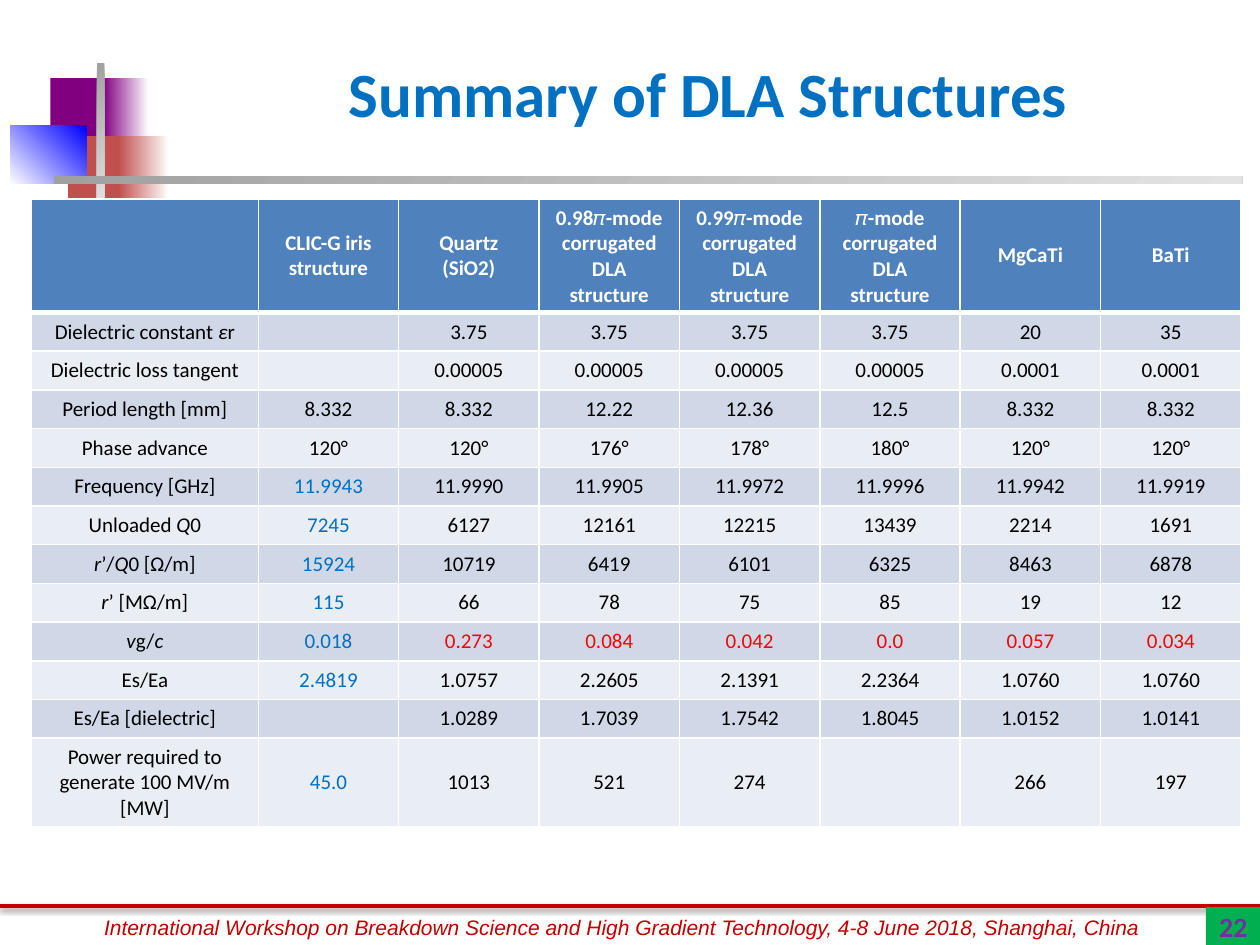
from lxml import etree
from pptx import Presentation
from pptx.dml.color import RGBColor
from pptx.enum.shapes import MSO_CONNECTOR, MSO_SHAPE
from pptx.enum.text import MSO_ANCHOR, PP_ALIGN
from pptx.oxml import parse_xml
from pptx.oxml.ns import nsdecls, qn
from pptx.util import Inches, Pt

CENTER, RIGHT = PP_ALIGN.CENTER, PP_ALIGN.RIGHT
MIDDLE, RECT = MSO_ANCHOR.MIDDLE, MSO_SHAPE.RECTANGLE
WHITE = RGBColor(0xFF, 0xFF, 0xFF)
BLACK = RGBColor(0x00, 0x00, 0x00)
PURPLE = RGBColor(0x80, 0x00, 0x80)
BRICK = RGBColor(0xC0, 0x50, 0x4D)
PURE_BLUE = RGBColor(0x00, 0x00, 0xFF)
DARK_GREY = RGBColor(0xA0, 0xA0, 0xA0)
LIGHT_GREY = RGBColor(0xE3, 0xE3, 0xE3)
CRIMSON = RGBColor(0xC0, 0x00, 0x00)
BLUE = RGBColor(0x00, 0x70, 0xC0)
RED = RGBColor(0xFF, 0x00, 0x00)
GREEN = RGBColor(0x00, 0xB0, 0x50)
VIOLET = RGBColor(0x70, 0x30, 0xA0)
HEADER = RGBColor(0x4F, 0x81, 0xBD)
BANDS = (RGBColor(0xE9, 0xED, 0xF4), RGBColor(0xD0, 0xD8, 0xE8))

prs = Presentation()
prs.slide_width, prs.slide_height = Inches(10), Inches(7.5)
s = prs.slides.add_slide(prs.slide_layouts[6])


def add_rect(box, color, end=None, angle=0):
    """Plain rectangle, or a gradient from color to end."""
    sp = s.shapes.add_shape(RECT, *[Inches(v) for v in box])
    sp.shadow.inherit = False
    sp.line.fill.background()
    if end is None:
        sp.fill.solid()
        sp.fill.fore_color.rgb = color
    else:
        sp.fill.gradient()
        sp.fill.gradient_angle = angle
        for stop, c in zip(sp.fill.gradient_stops, (color, end)):
            stop.color.rgb = c
            stop.position = 0 if c is color else 1
    return sp


def write(tf, text, size, color, bold=False, italic=False, font="Calibri", align=CENTER):
    """One paragraph; parts between asterisks are italic."""
    tf.word_wrap = True
    p = tf.paragraphs[0]
    p.alignment = align
    p.font.name, p.font.size, p.font.bold = font, Pt(size), bold
    p.font.color.rgb = color
    for i, part in enumerate(text.split("*")):
        if part:
            r = p.add_run()
            r.text = part
            r.font.italic = italic or i % 2 == 1


# Corner ornament and title rule
add_rect((0.4, 0.62, 0.48, 0.52), PURPLE)
add_rect((0.82, 0.62, 0.36, 0.52), PURPLE, WHITE)
add_rect((0.54, 1.08, 0.46, 0.52), BRICK)
add_rect((0.94, 1.08, 0.4, 0.52), BRICK, WHITE)
add_rect((0.08, 1, 0.61, 0.46), WHITE, PURE_BLUE, 45)
add_rect((0.77, 0.5, 0.06, 1.15), DARK_GREY, LIGHT_GREY, 315)
add_rect((0.43, 1.4, 9.43, 0.06), DARK_GREY, LIGHT_GREY, 315)

# Footer line with a soft shadow
line = s.shapes.add_connector(MSO_CONNECTOR.STRAIGHT, 0, Inches(7.19), Inches(10), Inches(7.19))
line.line.color.rgb = CRIMSON
line.line.width = Pt(2)
effects = etree.SubElement(line._element.spPr, qn("a:effectLst"))
effects.append(parse_xml(
    f'<a:outerShdw {nsdecls("a")} blurRad="{Pt(3.1)}" dist="{Pt(1.6)}" dir="5400000" rotWithShape="0">'
    '<a:srgbClr val="000000"><a:alpha val="38000"/></a:srgbClr></a:outerShdw>'))

# Footer text and title
footer = s.shapes.add_textbox(Inches(0.54), Inches(7.21), Inches(8.8), Inches(0.3))
write(footer.text_frame,
      "International Workshop on Breakdown Science and High Gradient Technology, "
      "4-8 June 2018, Shanghai, China", 12, CRIMSON, italic=True, font="Arial")
title = s.shapes.add_textbox(Inches(1.58), Inches(0.3), Inches(8.08), Inches(0.87))
title.text_frame.vertical_anchor = MIDDLE
write(title.text_frame, "Summary of DLA Structures", 36, BLUE, bold=True)

# Table
VELOCITY_ROW = 9
FIRST_RESULT_ROW = 5
rows = [
    ["", "CLIC-G iris structure", "Quartz (SiO2)", "0.98𝜋-mode corrugated DLA structure",
     "0.99𝜋-mode corrugated DLA structure", "𝜋-mode corrugated DLA structure", "MgCaTi", "BaTi"],
    ["Dielectric constant *ε*r", "", "3.75", "3.75", "3.75", "3.75", "20", "35"],
    ["Dielectric loss tangent", "", "0.00005", "0.00005", "0.00005", "0.00005", "0.0001", "0.0001"],
    ["Period length [mm]", "8.332", "8.332", "12.22", "12.36", "12.5", "8.332", "8.332"],
    ["Phase advance", "120°", "120°", "176°", "178°", "180°", "120°", "120°"],
    ["Frequency [GHz]", "11.9943", "11.9990", "11.9905", "11.9972", "11.9996", "11.9942", "11.9919"],
    ["Unloaded *Q*0", "7245", "6127", "12161", "12215", "13439", "2214", "1691"],
    ["*r*’/*Q*0 [Ω/m]", "15924", "10719", "6419", "6101", "6325", "8463", "6878"],
    ["*r*’ [MΩ/m]", "115", "66", "78", "75", "85", "19", "12"],
    ["*v*g/*c*", "0.018", "0.273", "0.084", "0.042", "0.0", "0.057", "0.034"],
    ["Es/Ea", "2.4819", "1.0757", "2.2605", "2.1391", "2.2364", "1.0760", "1.0760"],
    ["Es/Ea [dielectric]", "", "1.0289", "1.7039", "1.7542", "1.8045", "1.0152", "1.0141"],
    ["Power required to generate 100 MV/m [MW]", "45.0", "1013", "521", "274", "", "266", "197"],
]
n_rows, n_cols = len(rows), len(rows[0])
width, height = 9.6, 4.98
label_w, head_h, last_h = 1.8, 0.9, 0.7
table = s.shapes.add_table(n_rows, n_cols, Inches(0.25), Inches(1.58),
                           Inches(width), Inches(height)).table
for j, col in enumerate(table.columns):
    col.width = Inches(label_w if j == 0 else (width - label_w) / (n_cols - 1))
for i, row in enumerate(table.rows):
    row.height = Inches((height - head_h - last_h) / (n_rows - 2))
table.rows[0].height, table.rows[n_rows - 1].height = Inches(head_h), Inches(last_h)

for i, values in enumerate(rows):
    for j, text in enumerate(values):
        cell = table.cell(i, j)
        cell.vertical_anchor = MIDDLE
        # White borders, heavier around the header's lower edge
        tc_pr = cell._tc.get_or_add_tcPr()
        for side in ("lnL", "lnR", "lnT", "lnB"):
            heavy = (i, side) in ((0, "lnB"), (1, "lnT"))
            tc_pr.append(parse_xml(
                f'<a:{side} {nsdecls("a")} w="{Pt(3 if heavy else 1)}"><a:solidFill>'
                f'<a:srgbClr val="{WHITE}"/></a:solidFill></a:{side}>'))
        cell.fill.solid()
        cell.fill.fore_color.rgb = HEADER if i == 0 else BANDS[i % 2]
        if i == 0:
            color = WHITE
        elif j == 1 and i >= FIRST_RESULT_ROW:
            color = BLUE
        elif j > 1 and i == VELOCITY_ROW:
            color = RED
        else:
            color = BLACK
        write(cell.text_frame, text, 12, color, bold=i == 0)

# Slide number
number = add_rect((9.57, 7.2, 0.43, 0.3), GREEN)
number.text_frame.vertical_anchor = MIDDLE
write(number.text_frame, "22", 16, VIOLET, bold=True, align=RIGHT)

prs.save("out.pptx")
